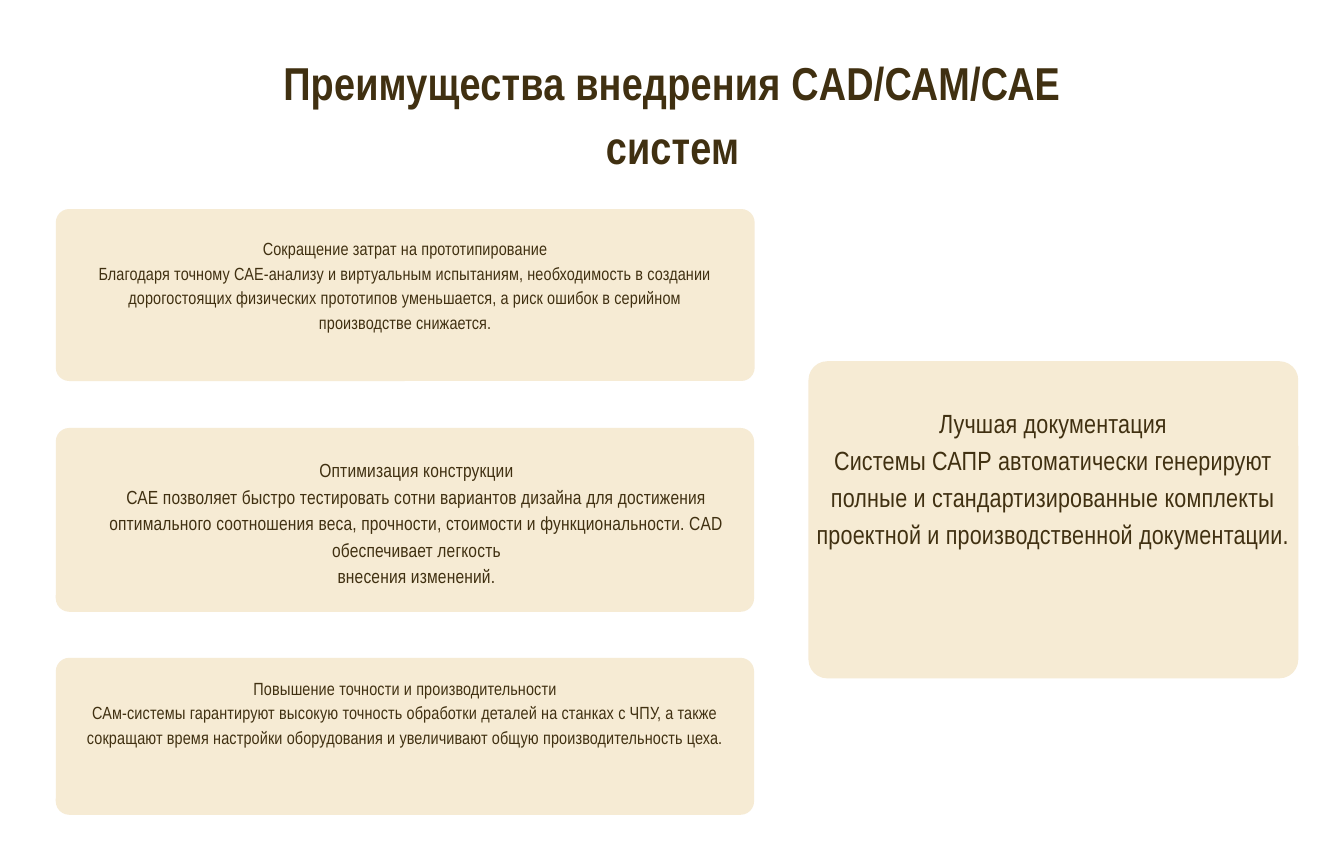
from dataclasses import dataclass

from pptx import Presentation
from pptx.dml.color import RGBColor
from pptx.enum.shapes import MSO_SHAPE
from pptx.enum.text import PP_ALIGN
from pptx.slide import Slide
from pptx.util import Pt

FONT = "Arial Narrow"
BROWN = "403011"
CREAM = "F6EBD4"


@dataclass
class Box:
    left: float
    top: float
    width: float
    height: float

    def lengths(self) -> list[Pt]:
        return [Pt(value) for value in (self.left, self.top, self.width, self.height)]


@dataclass
class TextBlock:
    box: Box
    size: float
    line_spacing: float
    paragraphs: list[str]
    bold: bool = False
    letter_spacing: float = 0.1


@dataclass
class Card:
    box: Box
    radius: float
    text: TextBlock


TITLE = TextBlock(
    Box(161.3, 30.2, 578.2, 128.2), 30.9, 43.2,
    ["Преимущества внедрения CAD/САМ/САЕ систем"],
    bold=True, letter_spacing=0.2,
)

CARDS = [
    Card(Box(37.4, 140, 468, 115.2), 9, TextBlock(
        Box(62.6, 157, 417.6, 97.9), 11.8, 16.5, [
            "Сокращение затрат на прототипирование",
            "Благодаря точному САЕ-анализу и виртуальным испытаниям, необходимость в создании "
            "дорогостоящих физических прототипов уменьшается, а риск ошибок в серийном",
            "производстве снижается.",
        ])),
    Card(Box(37.4, 286.6, 467.6, 123.1), 9, TextBlock(
        Box(62.6, 304.6, 432.7, 105.1), 12.7, 17.8, [
            "Оптимизация конструкции",
            "САЕ позволяет быстро тестировать сотни вариантов дизайна для достижения "
            "оптимального соотношения веса, прочности, стоимости и функциональности. CAD "
            "обеспечивает легкость",
            "внесения изменений.",
        ])),
    Card(Box(37.4, 440.6, 467.6, 105.1), 9, TextBlock(
        Box(47.5, 451.4, 447.8, 81.4), 11.8, 16.5, [
            "Повышение точности и производительности",
            "САм-системы гарантируют высокую точность обработки деталей на станках с ЧПУ, а также "
            "сокращают время настройки оборудования и увеличивают общую производительность цеха.",
        ])),
    Card(Box(541.4, 241.9, 328, 212.4), 12.6, TextBlock(
        Box(534.2, 269.3, 342, 171.4), 17.6, 24.7, [
            "Лучшая документация",
            "Системы САПР автоматически генерируют полные и стандартизированные комплекты "
            "проектной и производственной документации.",
        ])),
]


def color(value: str) -> RGBColor:
    return RGBColor.from_string(value)


def add_panel(slide: Slide, box: Box, radius: float) -> None:
    shape = slide.shapes.add_shape(MSO_SHAPE.ROUNDED_RECTANGLE, *box.lengths())
    shape.adjustments[0] = radius / min(box.width, box.height)
    shape.shadow.inherit = False
    shape.fill.solid()
    shape.fill.fore_color.rgb = color(CREAM)
    shape.line.fill.background()


def add_text(slide: Slide, block: TextBlock) -> None:
    frame = slide.shapes.add_textbox(*block.box.lengths()).text_frame
    frame.word_wrap = True
    frame.margin_left = frame.margin_top = frame.margin_right = frame.margin_bottom = 0
    frame.text = "\n".join(block.paragraphs)
    for paragraph in frame.paragraphs:
        paragraph.alignment = PP_ALIGN.CENTER
        paragraph.line_spacing = Pt(block.line_spacing)
        paragraph.font.name = FONT
        paragraph.font.size = Pt(block.size)
        paragraph.font.bold = block.bold
        paragraph.font.color.rgb = color(BROWN)
        for run in paragraph.runs:
            run._r.get_or_add_rPr().set("spc", str(round(block.letter_spacing * 100)))


def main() -> None:
    presentation = Presentation()
    presentation.slide_width = Pt(900)
    presentation.slide_height = Pt(565.9)
    slide = presentation.slides.add_slide(presentation.slide_layouts[6])
    add_text(slide, TITLE)
    for card in CARDS:
        add_panel(slide, card.box, card.radius)
        add_text(slide, card.text)
    presentation.save("out.pptx")


if __name__ == "__main__":
    main()
